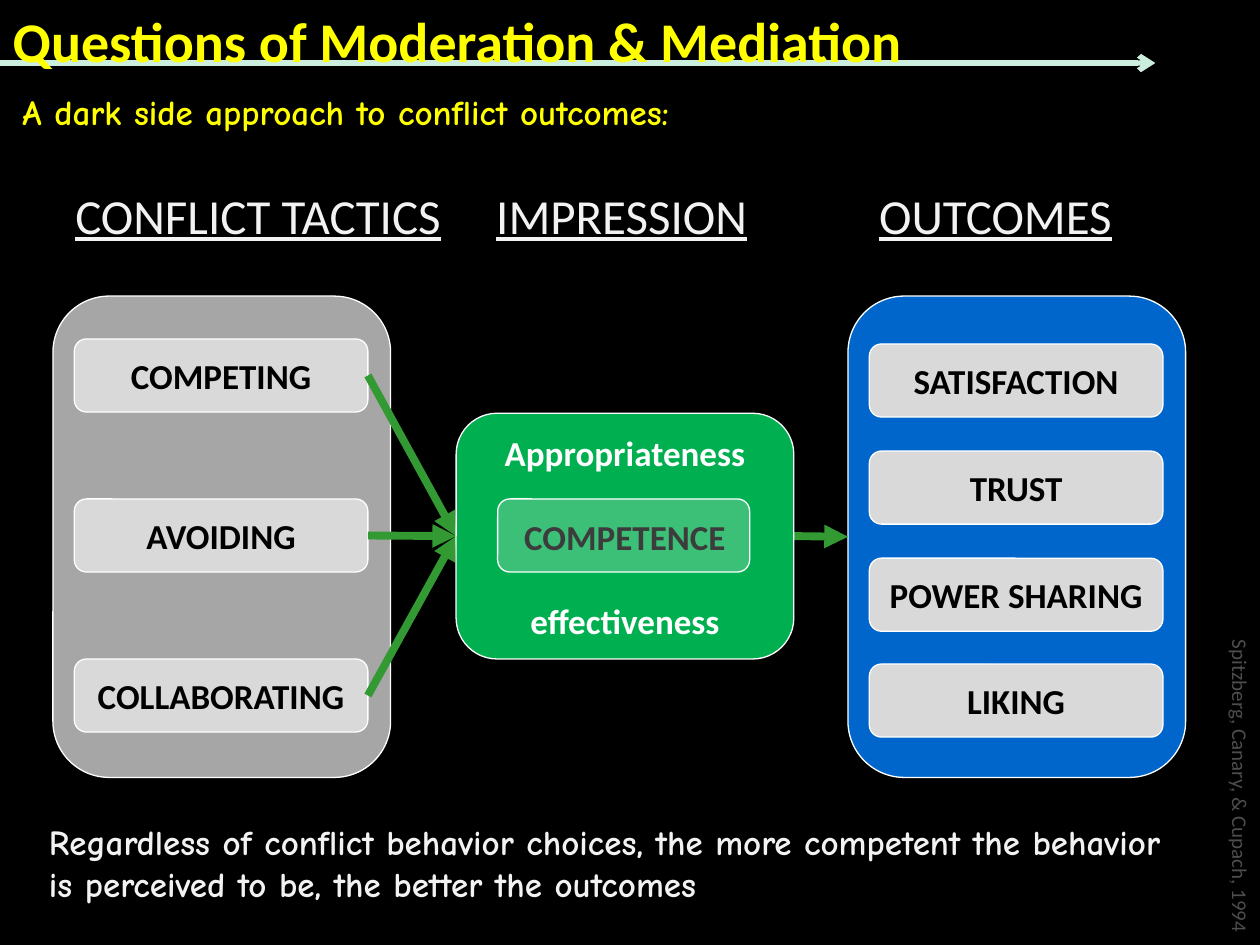
"""Build a slide linking conflict tactics, perceived competence and outcomes."""
from lxml import etree
from pptx import Presentation
from pptx.dml.color import RGBColor
from pptx.enum.shapes import MSO_CONNECTOR, MSO_SHAPE
from pptx.enum.text import MSO_ANCHOR, MSO_AUTO_SIZE, PP_ALIGN
from pptx.oxml.ns import qn
from pptx.util import Inches, Pt

ROUNDED = MSO_SHAPE.ROUNDED_RECTANGLE
STRAIGHT = MSO_CONNECTOR.STRAIGHT
LEFT, CENTER, RIGHT = PP_ALIGN.LEFT, PP_ALIGN.CENTER, PP_ALIGN.RIGHT
TOP, MIDDLE = MSO_ANCHOR.TOP, MSO_ANCHOR.MIDDLE
NO_FIT = MSO_AUTO_SIZE.NONE
LEFT_SIDE, RIGHT_SIDE = 1, 3

BLACK = RGBColor(0x00, 0x00, 0x00)
WHITE = RGBColor(0xFF, 0xFF, 0xFF)
OFF_WHITE = RGBColor(0xF2, 0xF2, 0xF2)
YELLOW = RGBColor(0xFF, 0xFF, 0x00)
LIGHT_GRAY = RGBColor(0xD9, 0xD9, 0xD9)
MID_GRAY = RGBColor(0xA6, 0xA6, 0xA6)
DARK_GRAY = RGBColor(0x4D, 0x4D, 0x4D)
BLUE = RGBColor(0x00, 0x66, 0xCC)
GREEN = RGBColor(0x00, 0xB0, 0x50)
ARROW_GREEN = RGBColor(0x33, 0x99, 0x33)
MINT = RGBColor(0xCC, 0xEE, 0xDF)


def write(shape, lines, size, colors, font="Calibri", bold=True,
          align=LEFT, anchor=TOP, wrap=True, gap=0):
    frame = shape.text_frame
    frame.text = "\n".join(lines)
    frame.word_wrap = wrap
    frame.auto_size = NO_FIT
    frame.vertical_anchor = anchor
    for index, paragraph in enumerate(frame.paragraphs):
        paragraph.alignment = align
        paragraph.space_before = Pt(gap if index else 0)
        paragraph.font.name = font
        paragraph.font.size = Pt(size)
        paragraph.font.bold = bold
        paragraph.font.color.rgb = colors[index]


def style_arrow(connector, color, width, head):
    connector.line.color.rgb = color
    connector.line.width = Pt(width)
    etree.SubElement(connector.line._get_or_add_ln(), qn("a:tailEnd"), type=head)
    etree.SubElement(connector._element.spPr, qn("a:effectLst"))


prs = Presentation()
prs.slide_width, prs.slide_height = Inches(10), Inches(7.5)
slide = prs.slides.add_slide(prs.slide_layouts[5])
slide.background.fill.solid()
slide.background.fill.fore_color.rgb = BLACK
shapes = slide.shapes

boxes = {}
for name, left, top, width, height, color in [
    ("tactics", 0.42, 2.35, 2.68, 3.82, MID_GRAY),
    ("outcomes", 6.73, 2.35, 2.68, 3.82, BLUE),
    ("SATISFACTION", 6.9, 2.73, 2.33, 0.58, LIGHT_GRAY),
    ("TRUST", 6.9, 3.58, 2.33, 0.58, LIGHT_GRAY),
    ("POWER SHARING", 6.9, 4.43, 2.33, 0.58, LIGHT_GRAY),
    ("LIKING", 6.9, 5.27, 2.33, 0.58, LIGHT_GRAY),
    ("COMPETING", 0.59, 2.69, 2.33, 0.58, LIGHT_GRAY),
    ("AVOIDING", 0.59, 3.96, 2.33, 0.58, LIGHT_GRAY),
    ("COLLABORATING", 0.59, 5.23, 2.33, 0.58, LIGHT_GRAY),
    ("impression", 3.62, 3.28, 2.68, 1.95, GREEN),
    ("competence", 3.95, 3.96, 2, 0.58, OFF_WHITE),
]:
    box = shapes.add_shape(ROUNDED, Inches(left), Inches(top), Inches(width), Inches(height))
    box.shadow.inherit = False
    box.fill.solid()
    box.fill.fore_color.rgb = color
    box.line.color.rgb = WHITE
    box.line.width = Pt(0.75)
    if name.isupper():
        write(box, [name], 20, [BLACK], align=CENTER, anchor=MIDDLE)
        box.text_frame.margin_left = box.text_frame.margin_right = Inches(0.05)
    boxes[name] = box

impression, competence = boxes["impression"], boxes["competence"]
write(impression, ["Appropriateness", "COMPETENCE", "effectiveness"], 20,
      [WHITE, BLACK, WHITE], align=CENTER, anchor=MIDDLE, gap=24)
overlay_color = competence.fill._xPr.find(qn("a:solidFill"))[0]
etree.SubElement(overlay_color, qn("a:alpha"), val="25000")

for source, target in [("COMPETING", "impression"), ("AVOIDING", "impression"),
                       ("COLLABORATING", "impression"), ("impression", "outcomes")]:
    influence = shapes.add_connector(STRAIGHT, 0, 0, 0, 0)
    influence.begin_connect(boxes[source], RIGHT_SIDE)
    influence.end_connect(boxes[target], LEFT_SIDE)
    style_arrow(influence, ARROW_GREEN, 4.5, "triangle")

for front in (impression, competence):
    front._element.getparent().append(front._element)

for heading, left, width in [("CONFLICT TACTICS", 0.5, 3.2), ("IMPRESSION", 3.84, 2.3),
                             ("OUTCOMES", 6.88, 2.3)]:
    column = shapes.add_textbox(Inches(left), Inches(1.42), Inches(width), Inches(0.57))
    write(column, [heading], 28, [OFF_WHITE], bold=False)
    column.text_frame.paragraphs[0].font.underline = True

citation = shapes.add_textbox(Inches(8.22), Inches(5.72), Inches(3.25), Inches(0.3))
citation.rotation = 90
write(citation, ["Spitzberg, Canary, & Cupach, 1994"], 12, [DARK_GRAY], bold=False, align=RIGHT)

subtitle = shapes.add_textbox(Inches(0.08), Inches(0.67), Inches(6.11), Inches(0.44))
write(subtitle, ["A dark side approach to conflict outcomes:"], 20, [YELLOW],
      font="Comic Neue", wrap=False)

conclusion = shapes.add_textbox(Inches(0.29), Inches(6.46), Inches(9.3), Inches(0.77))
write(conclusion, ["Regardless of conflict behavior choices, the more competent the behavior "
                   "is perceived to be, the better the outcomes"],
      20, [OFF_WHITE], font="Comic Neue")

title_rule = shapes.add_connector(STRAIGHT, 0, Inches(0.5), Inches(9.17), Inches(0.5))
style_arrow(title_rule, MINT, 3, "arrow")

title = shapes.title
title.left, title.top, title.width, title.height = 0, 0, Inches(7.33), Inches(0.64)
write(title, ["Questions of Moderation & Mediation"], 32, [YELLOW], wrap=False)
title._element.getparent().append(title._element)

prs.save("out.pptx")
